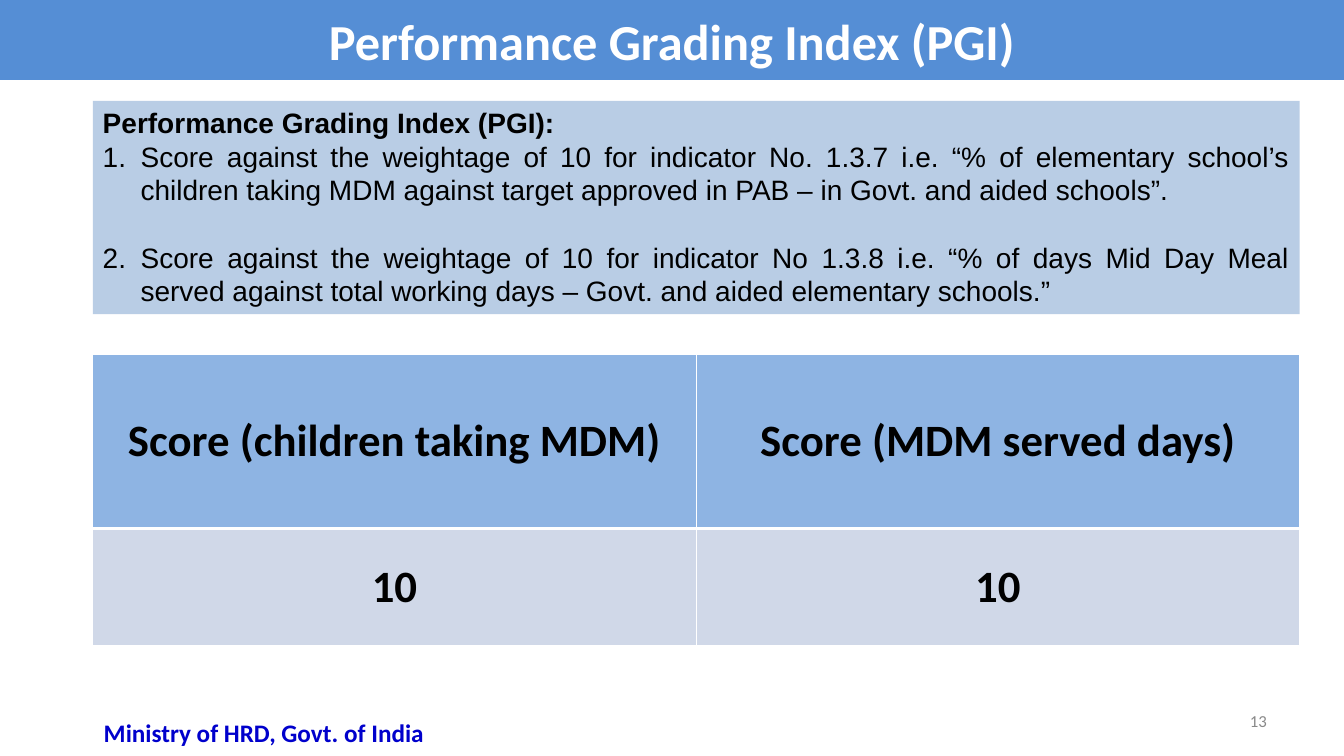
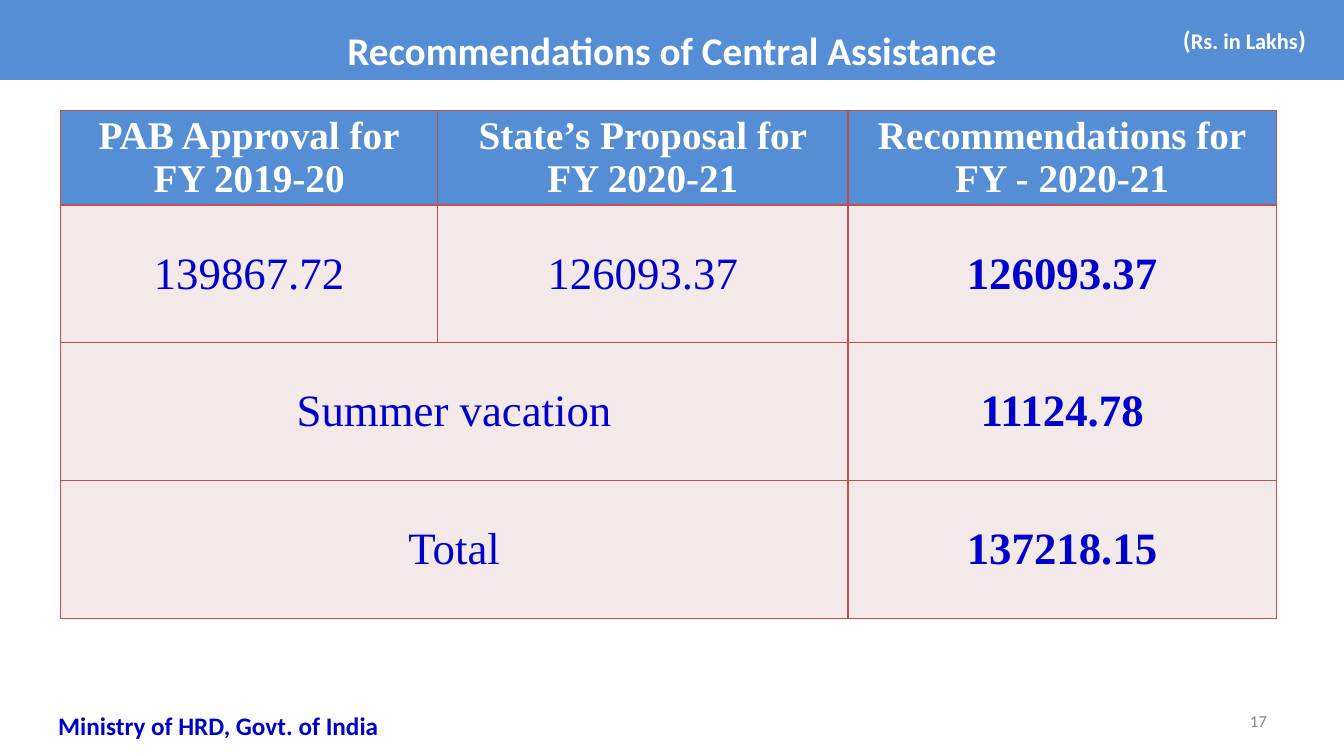
from dataclasses import dataclass, replace

from lxml.etree import SubElement
from pptx import Presentation
from pptx.dml.color import RGBColor
from pptx.enum.shapes import MSO_SHAPE as Preset
from pptx.enum.text import MSO_ANCHOR as Anchor, PP_ALIGN as Align
from pptx.oxml.ns import qn
from pptx.util import Pt

SLIDE_WIDTH, SLIDE_HEIGHT = 960, 540
BAND_HEIGHT = 57
WHITE, BLACK, NAVY, GREY = "FFFFFF", "000000", "0000CC", "898989"
BAND_BLUE, HEADER_BLUE, BOX_BLUE = "558ED5", "8EB4E3", "B9CDE5"
PALE_BLUE, PALE_RED, RED = "D0D8E8", "F4E9E9", "C0504D"


@dataclass(frozen=True)
class TextStyle:
    size: float
    color: str
    bold: bool = False
    font: str = "Calibri"


@dataclass(frozen=True)
class Box:
    left: float
    top: float
    width: float
    height: float

    def lengths(self):
        return Pt(self.left), Pt(self.top), Pt(self.width), Pt(self.height)


@dataclass(frozen=True)
class Cell:
    text: str
    style: TextStyle
    fill: str
    side_margin: float = 0.7
    span: int = 1
    bottom_line: float = 1


TITLE = TextStyle(36, WHITE, True)
FOOTER = TextStyle(18, NAVY, True)
PAGE_NUMBER = TextStyle(12, GREY)
UNIT = TextStyle(18, WHITE, True)
BODY = TextStyle(20, BLACK, font="Arial")
SCORE = TextStyle(32, BLACK, True)
AMOUNT = TextStyle(32, NAVY, font="Times New Roman")
AMOUNT_HEADER = TextStyle(28, WHITE, True, "Times New Roman")


def rgb(color: str) -> RGBColor:
    return RGBColor.from_string(color)


def format_run(run, style: TextStyle) -> None:
    font = run.font
    font.size, font.bold, font.name = Pt(style.size), style.bold, style.font
    font.color.rgb = rgb(style.color)


def write(text_frame, text: str, style: TextStyle, align=Align.CENTER) -> None:
    text_frame.text = text
    for paragraph in text_frame.paragraphs:
        paragraph.alignment = align
        for run in paragraph.runs:
            format_run(run, style)


def add_panel(slide, box: Box, fill: str):
    shape = slide.shapes.add_shape(Preset.RECTANGLE, *box.lengths())
    shape.shadow.inherit = False
    shape.fill.solid()
    shape.fill.fore_color.rgb = rgb(fill)
    shape.line.fill.background()
    return shape.text_frame


def add_text(slide, box: Box, text: str, style: TextStyle,
             align=Align.CENTER, anchor=Anchor.TOP, wrap: bool = True):
    text_frame = slide.shapes.add_textbox(*box.lengths()).text_frame
    text_frame.word_wrap = wrap
    text_frame.vertical_anchor = anchor
    write(text_frame, text, style, align)
    return text_frame


def add_base_slide(presentation, title: str, title_style: TextStyle, line_spacing: float,
                   page: int, footer_left: float, footer_top: float):
    """Add a slide with its title band, ministry footer and page number."""
    slide = presentation.slides.add_slide(presentation.slide_layouts[6])
    band = add_panel(slide, Box(0, 0, SLIDE_WIDTH, BAND_HEIGHT), BAND_BLUE)
    band.vertical_anchor = Anchor.MIDDLE
    write(band, title, title_style)
    band.paragraphs[0].line_spacing = line_spacing
    add_text(slide, Box(footer_left, footer_top, 282, 29),
             "Ministry of HRD, Govt. of India", FOOTER)
    add_text(slide, Box(688, 500.5, 224, 29), str(page), PAGE_NUMBER,
             Align.RIGHT, Anchor.MIDDLE)
    return slide


def set_borders(table_cell, color: str, bottom_line: float) -> None:
    properties = table_cell._tc.get_or_add_tcPr()
    for side in ("lnL", "lnR", "lnT", "lnB"):
        width = bottom_line if side == "lnB" else 1
        line = SubElement(properties, qn(f"a:{side}"), w=str(Pt(width)))
        fill = SubElement(line, qn("a:solidFill"))
        SubElement(fill, qn("a:srgbClr"), val=color)


def add_table(slide, left: float, top: float, widths: list[float], heights: list[float],
              rows: list[list[Cell]], border: str) -> None:
    box = Box(left, top, sum(widths), sum(heights))
    table = slide.shapes.add_table(len(heights), len(widths), *box.lengths()).table
    table.first_row = table.horz_banding = False
    for column, width in zip(table.columns, widths):
        column.width = Pt(width)
    for row, height in zip(table.rows, heights):
        row.height = Pt(height)
    for row_index, row in enumerate(rows):
        column_index = 0
        for cell in row:
            last = column_index + cell.span - 1
            first_cell = table.cell(row_index, column_index)
            if cell.span > 1:
                first_cell.merge(table.cell(row_index, last))
            for index in range(column_index, last + 1):
                table_cell = table.cell(row_index, index)
                set_borders(table_cell, border, cell.bottom_line)
                table_cell.fill.solid()
                table_cell.fill.fore_color.rgb = rgb(cell.fill)
            first_cell.margin_left = first_cell.margin_right = Pt(cell.side_margin)
            first_cell.margin_top = first_cell.margin_bottom = Pt(0)
            first_cell.vertical_anchor = Anchor.MIDDLE
            write(first_cell.text_frame, cell.text, cell.style)
            column_index = last + 1


def number_paragraph(paragraph, number: int, indent: float) -> None:
    properties = paragraph._p.get_or_add_pPr()
    properties.set("marL", str(Pt(indent)))
    properties.set("indent", str(-Pt(indent)))
    SubElement(properties, qn("a:buFont"), typeface="+mj-lt")
    SubElement(properties, qn("a:buAutoNum"), type="arabicPeriod", startAt=str(number))


def add_grading_slide(presentation) -> None:
    slide = add_base_slide(presentation, "Performance Grading Index (PGI)", TITLE, 1,
                           13, 47.5, 509)
    left, width = 66.3, 862
    add_table(
        slide, left, 253.5, [width / 2] * 2, [124, 84],
        [[Cell(text, SCORE, HEADER_BLUE, bottom_line=3)
          for text in ("Score (children taking MDM)", "Score (MDM served days)")],
         [Cell("10", SCORE, PALE_BLUE)] * 2],
        WHITE)
    text_frame = add_panel(slide, Box(left, 72, width, 152.5), BOX_BLUE)
    text_frame.vertical_anchor = Anchor.TOP
    write(text_frame, "\n".join([
        "Performance Grading Index (PGI):",
        "Score against the weightage of 10 for indicator No. 1.3.7 i.e. “% of elementary "
        "school’s children taking MDM against target approved in PAB – in Govt. and aided "
        "schools”.",
        "Score against the weightage of 10 for indicator No 1.3.8 i.e. “% of days Mid Day "
        "Meal served against total working days – Govt. and aided elementary schools.”",
    ]), BODY, Align.JUSTIFY)
    heading, *indicators = text_frame.paragraphs
    heading.runs[0].font.bold = True
    indicators[-1].space_before = Pt(24)
    for number, paragraph in enumerate(indicators, 1):
        number_paragraph(paragraph, number, 27)


def add_assistance_slide(presentation) -> None:
    slide = add_base_slide(presentation, "Recommendations of Central Assistance",
                           replace(TITLE, size=28), 1.4, 17, 15, 504)
    headers = ("PAB Approval for\nFY 2019-20", "State’s Proposal for\nFY 2020-21",
               "Recommendations for\nFY - 2020-21")
    amounts = (("139867.72", "126093.37", "126093.37"),
               ("Summer vacation", "11124.78"),
               ("Total", "137218.15"))
    rows = [[Cell(text, AMOUNT_HEADER, BAND_BLUE, 5) for text in headers]]
    for *labels, recommended in amounts:
        span = 2 // len(labels)
        rows.append([Cell(text, AMOUNT, PALE_RED, span=span) for text in labels]
                    + [Cell(recommended, replace(AMOUNT, bold=True), PALE_RED)])
    add_table(slide, 43.2, 79.2, [269.5, 293, 306], [67] + [98.4] * 3, rows, RED)
    unit = add_text(slide, Box(837.4, 13.7, 103, 29), "(", UNIT, wrap=False)
    for text, size in (("Rs. in Lakhs", 16), (")", 18)):
        run = unit.paragraphs[0].add_run()
        run.text = text
        format_run(run, replace(UNIT, size=size))


def main() -> None:
    presentation = Presentation()
    presentation.slide_width, presentation.slide_height = Pt(SLIDE_WIDTH), Pt(SLIDE_HEIGHT)
    add_grading_slide(presentation)
    add_assistance_slide(presentation)
    presentation.save("out.pptx")


if __name__ == "__main__":
    main()
